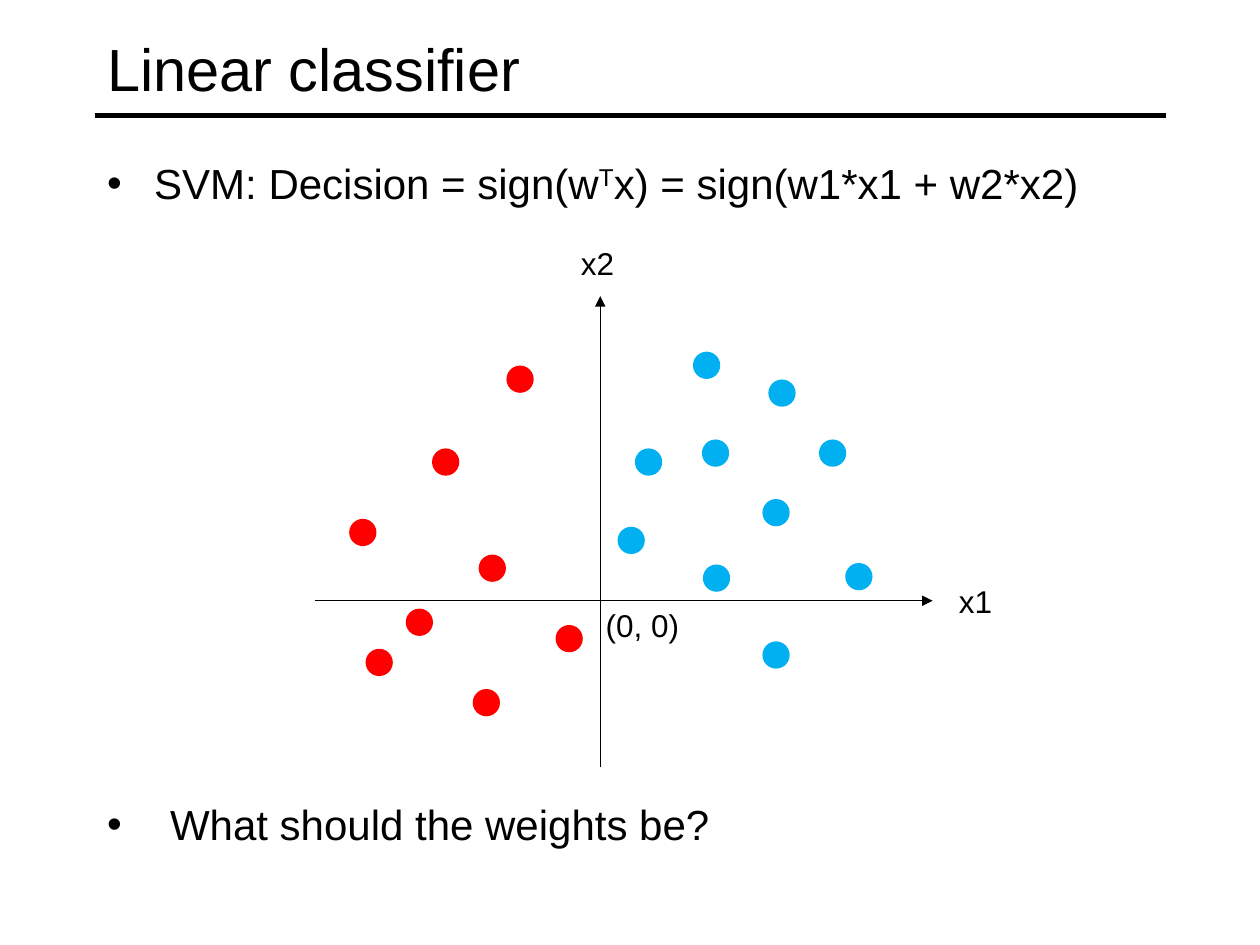
from lxml.etree import SubElement
from pptx import Presentation
from pptx.dml.color import RGBColor
from pptx.enum.shapes import MSO_CONNECTOR, MSO_SHAPE
from pptx.enum.text import MSO_ANCHOR, PP_ALIGN
from pptx.oxml.ns import qn
from pptx.util import Cm, Pt

BLACK = RGBColor(0x00, 0x00, 0x00)
RED = RGBColor(0xFF, 0x00, 0x00)
BLUE = RGBColor(0x00, 0xB0, 0xF0)

MARGIN = 1.91
CONTENT_WIDTH = 21.59
DOT_SIZE = 0.55
ORIGIN_X, ORIGIN_Y = 12.1, 12.11

RED_POINTS = [(7.37, 13.08), (8.18, 12.27), (9.53, 13.89), (9.65, 11.18),
              (7.04, 10.46), (8.71, 9.04), (10.21, 7.37), (11.2, 12.6)]
BLUE_POINTS = [(12.8, 9.04), (12.45, 10.62), (13.97, 7.09), (14.15, 8.86),
               (15.49, 7.65), (16.51, 8.86), (15.37, 10.06), (14.17, 11.38),
               (17.04, 11.35), (15.37, 12.93)]
AXIS_LABELS = [("x1", 19.08, 11.61, 1.19), ("x2", 11.46, 4.8, 1.19),
               ("(0, 0)", 11.96, 12.09, 2.01)]


def add_run(paragraph, text, size=18, color=BLACK, font="Arial", baseline=None):
    """Append a formatted run, optionally raised by a baseline percentage."""
    run = paragraph.add_run()
    run.text = text
    run.font.size = Pt(size)
    run.font.name = font
    run.font.color.rgb = color
    if baseline:
        run._r.get_or_add_rPr().set("baseline", str(baseline * 1000))


def set_bullet(paragraph, indent):
    """Give the paragraph a round bullet with a hanging indent in centimetres."""
    properties = paragraph._p.get_or_add_pPr()
    properties.set("marL", str(Cm(indent)))
    properties.set("indent", str(-Cm(indent)))
    SubElement(properties, qn("a:buFont"), typeface="Arial")
    SubElement(properties, qn("a:buChar"), char="•")


def add_text_box(slide, left, top, width, height, wrap=False):
    """Add a text box and return its first paragraph."""
    box = slide.shapes.add_textbox(Cm(left), Cm(top), Cm(width), Cm(height))
    box.text_frame.word_wrap = wrap
    return box.text_frame.paragraphs[0]


def add_line(slide, start, end, width, arrow=False):
    """Draw a straight black line, with an arrowhead at its end if asked."""
    line = slide.shapes.add_connector(
        MSO_CONNECTOR.STRAIGHT, *(Cm(value) for value in start + end))
    line.line.color.rgb = BLACK
    line.line.width = Pt(width)
    if arrow:
        SubElement(line.line._get_or_add_ln(), qn("a:tailEnd"), type="triangle")
    SubElement(line._element.spPr, qn("a:effectLst"))


def add_dot(slide, left, top, color):
    """Draw one data point."""
    dot = slide.shapes.add_shape(
        MSO_SHAPE.OVAL, Cm(left), Cm(top), Cm(DOT_SIZE), Cm(DOT_SIZE))
    dot.shadow.inherit = False
    dot.fill.solid()
    dot.fill.fore_color.rgb = color
    dot.line.fill.background()


def format_title(slide, text):
    """Place the title placeholder above the rule and fill it."""
    title = slide.shapes.title
    title.left, title.top = Cm(MARGIN), Cm(0.2)
    title.width, title.height = Cm(CONTENT_WIDTH), Cm(2.34)
    title.text_frame.vertical_anchor = MSO_ANCHOR.MIDDLE
    paragraph = title.text_frame.paragraphs[0]
    paragraph.alignment = PP_ALIGN.LEFT
    add_run(paragraph, text, size=34)


def add_plot(slide):
    """Draw the axes, their labels and both classes of points."""
    add_line(slide, (6.35, ORIGIN_Y), (18.8, ORIGIN_Y), 0.75, arrow=True)
    add_line(slide, (ORIGIN_X, 15.47), (ORIGIN_X, 5.97), 0.75, arrow=True)
    for color, points in ((RED, RED_POINTS), (BLUE, BLUE_POINTS)):
        for left, top in points:
            add_dot(slide, left, top, color)
    for text, left, top, width in AXIS_LABELS:
        add_run(add_text_box(slide, left, top, width, 1.02), text)


def main():
    """Build the linear classifier slide."""
    presentation = Presentation()
    presentation.slide_width, presentation.slide_height = Cm(25.4), Cm(19.05)
    slide = presentation.slides.add_slide(presentation.slide_layouts[5])

    add_line(slide, (MARGIN, 2.33), (MARGIN + CONTENT_WIDTH, 2.33), 3)
    format_title(slide, "Linear classifier")

    decision = add_text_box(slide, MARGIN, 3.05, 20.52, 1.27, wrap=True)
    set_bullet(decision, 0.95)
    add_run(decision, "SVM: Decision = sign(w", size=24)
    add_run(decision, "T", size=24, baseline=30)
    add_run(decision, "x) = sign(w1*x1 + w2*x2)", size=24)

    add_plot(slide)

    question = add_text_box(slide, MARGIN, 15.98, CONTENT_WIDTH, 2.03, wrap=True)
    set_bullet(question, 1.27)
    add_run(question, "What should the weights be?", size=24)

    presentation.save("out.pptx")


if __name__ == "__main__":
    main()
